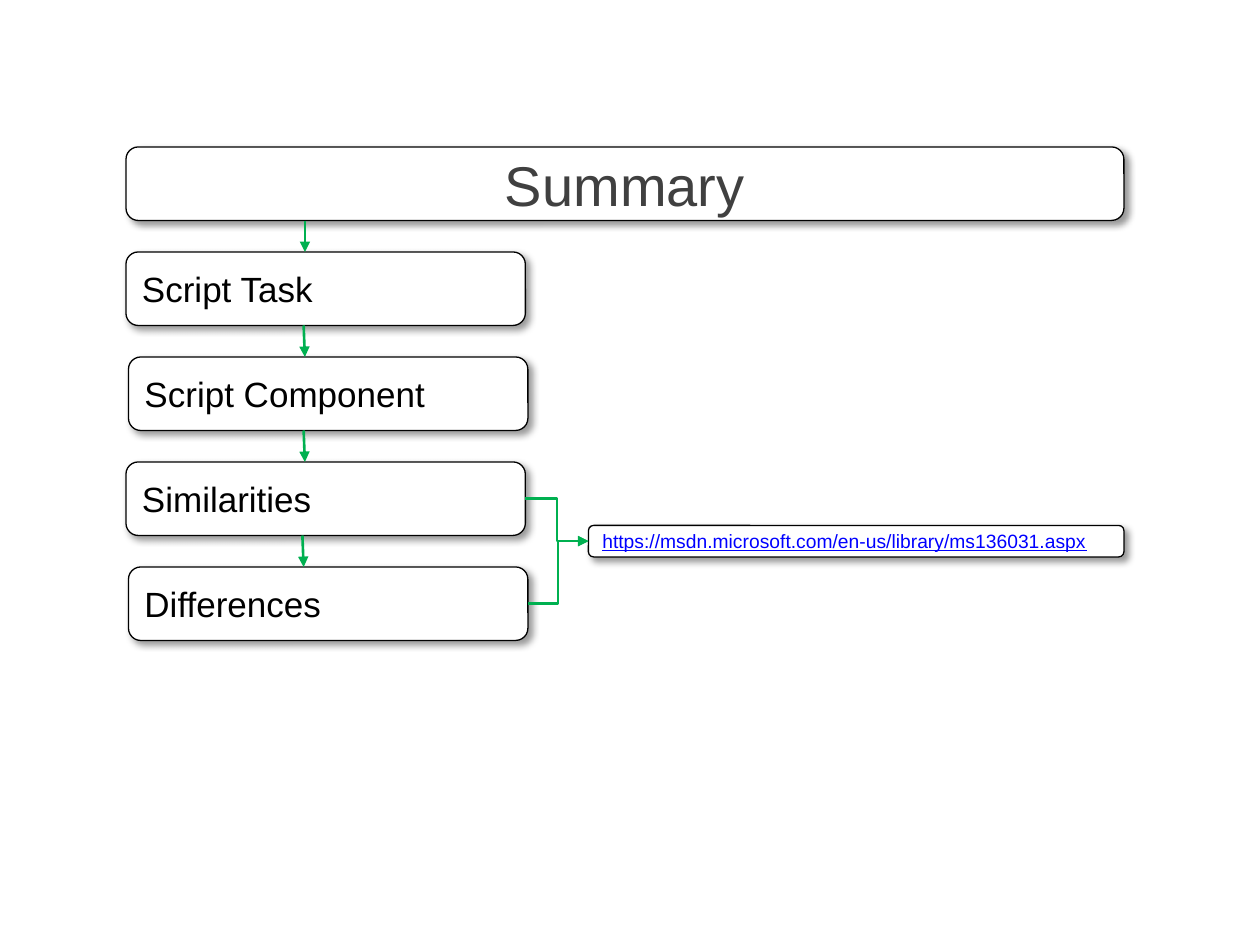
from lxml.etree import SubElement
from pptx import Presentation
from pptx.dml.color import RGBColor
from pptx.enum.shapes import MSO_CONNECTOR as Link, MSO_SHAPE as Preset
from pptx.enum.text import MSO_ANCHOR as Anchor, PP_ALIGN as Align
from pptx.oxml.ns import qn
from pptx.util import Inches, Pt

WHITE = RGBColor(0xFF, 0xFF, 0xFF)
BLACK = RGBColor(0, 0, 0)
GRAY = RGBColor(0x40, 0x40, 0x40)
GREEN = RGBColor(0x00, 0xB0, 0x50)
BLUE = RGBColor(0x00, 0x00, 0xFF)

TOP = 7 / 6      # top of the title box
PITCH = 5 / 6    # distance from one row to the next
HEIGHT = 7 / 12  # height of the title and topic boxes
TOPICS = [("Script Task", 1), ("Script Component", 1.02),
          ("Similarities", 1), ("Differences", 1.02)]
ARROW_ENDS = [(2.42, 2.42), (2.41, 2.42), (2.41, 2.42), (2.4, 2.41)]
ADDRESS = "https://msdn.microsoft.com/en-us/library/ms136031.aspx"


def add_shadow(box):
    box.shadow.inherit = False
    effects = box.element.spPr.find(qn("a:effectLst"))
    shadow = SubElement(effects, qn("a:outerShdw"), blurRad=str(Pt(4)),
                        dist=str(Pt(3)), dir=str(45 * 60000),
                        algn="tl", rotWithShape="0")
    color = SubElement(shadow, qn("a:srgbClr"), val=str(BLACK))
    SubElement(color, qn("a:alpha"), val="40000")


def add_box(page, left, top, width, height, text, size,
            color=BLACK, align=Align.LEFT, underline=None):
    box = page.shapes.add_shape(Preset.ROUNDED_RECTANGLE, Inches(left),
                                Inches(top), Inches(width), Inches(height))
    box.fill.solid()
    box.fill.fore_color.rgb = WHITE
    box.line.color.rgb = BLACK
    box.line.width = Pt(0.75)
    add_shadow(box)
    frame = box.text_frame
    frame.word_wrap = True
    frame.vertical_anchor = Anchor.MIDDLE
    para = frame.paragraphs[0]
    para.text = text
    para.alignment = align
    para.font.name = "Arial"
    para.font.size = Pt(size)
    para.font.color.rgb = color
    para.font.underline = underline
    return box


def add_arrow(page, kind, start, end):
    arrow = page.shapes.add_connector(kind, *map(Inches, start + end))
    arrow.line.color.rgb = GREEN
    arrow.line.width = Pt(1.5)
    properties = arrow.element.spPr
    SubElement(properties.find(qn("a:ln")), qn("a:tailEnd"), type="triangle")
    SubElement(properties, qn("a:effectLst"))
    return arrow


def join_sides(page, source, target):
    arrow = add_arrow(page, Link.ELBOW, (0, 0), (1, 1))
    arrow.begin_connect(source, 3)
    arrow.end_connect(target, 1)


def main():
    deck = Presentation()
    deck.slide_width, deck.slide_height = Inches(10), Inches(7.5)
    page = deck.slides.add_slide(deck.slide_layouts[6])

    # Title and the topics below it
    add_box(page, 1, TOP, 7.92, HEIGHT, "Summary", 32, GRAY, Align.CENTER)
    topics = [add_box(page, left, TOP + row * PITCH, 3.17, HEIGHT, text, 20)
              for row, (text, left) in enumerate(TOPICS, 1)]

    # Arrows down through the gaps between rows
    for row, (start, end) in enumerate(ARROW_ENDS):
        top = TOP + row * PITCH
        add_arrow(page, Link.STRAIGHT, (start, top + HEIGHT),
                  (end, top + PITCH))

    # Reference for the last two topics
    reference = add_box(page, 4.67, 4.17, 4.25, 0.25, ADDRESS, 11, BLUE,
                        underline=True)
    for topic in topics[-2:]:
        join_sides(page, topic, reference)

    deck.save("out.pptx")


if __name__ == "__main__":
    main()
